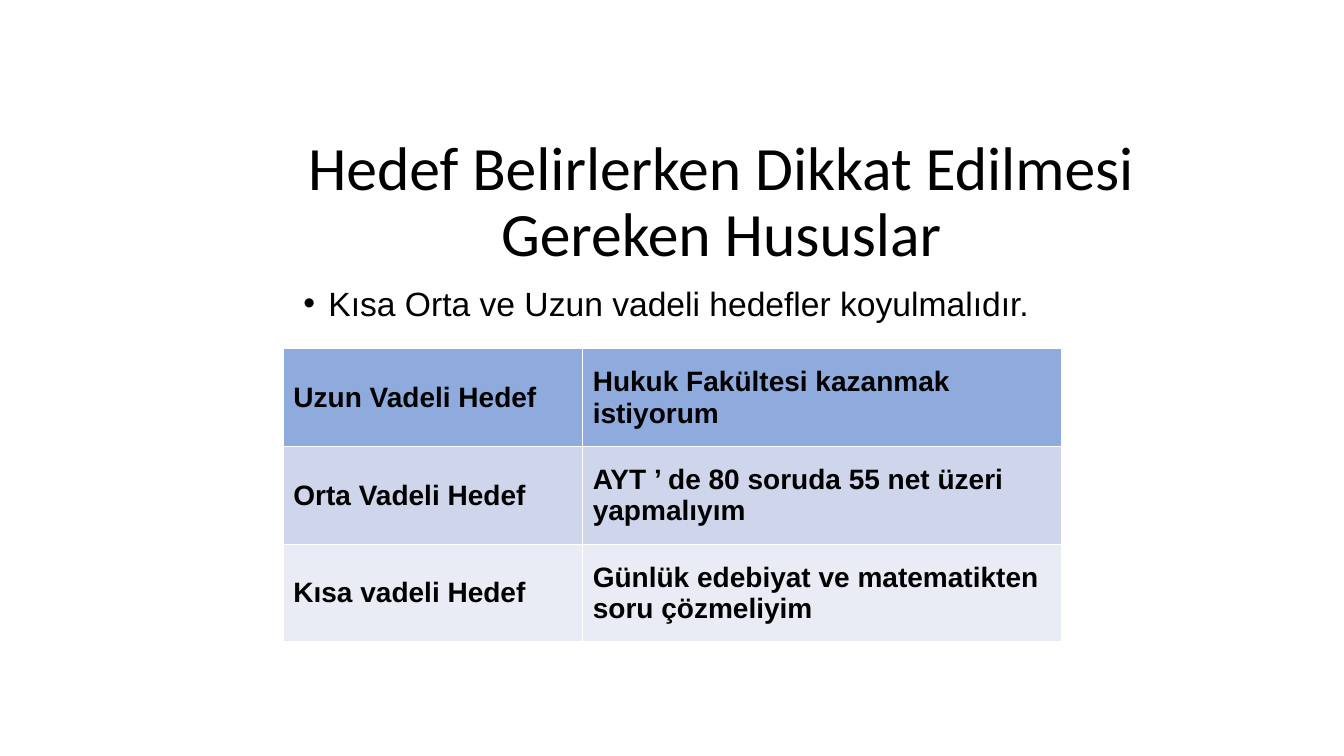
"""Build a slide on setting long, medium and short term goals."""
from lxml import etree
from pptx import Presentation
from pptx.dml.color import RGBColor
from pptx.enum.text import MSO_ANCHOR, PP_ALIGN
from pptx.oxml.ns import qn
from pptx.util import Inches, Pt

MIDDLE, TOP = MSO_ANCHOR.MIDDLE, MSO_ANCHOR.TOP
CENTER, LEFT = PP_ALIGN.CENTER, PP_ALIGN.LEFT

TITLE = "Hedef Belirlerken Dikkat Edilmesi Gereken Hususlar"
ADVICE = "Kısa Orta ve Uzun vadeli hedefler koyulmalıdır."
GOALS = [
    ("Uzun Vadeli Hedef", "Hukuk Fakültesi kazanmak istiyorum", "8FAADC"),
    ("Orta Vadeli Hedef", "AYT ’ de 80 soruda 55 net üzeri yapmalıyım", "CFD5EA"),
    ("Kısa vadeli Hedef", "Günlük edebiyat ve matematikten soru çözmeliyim", "E9EBF5"),
]
COL_WIDTHS = (2.97, 4.75)
ROW_HEIGHT = 0.97


def color(hex_value):
    return RGBColor.from_string(hex_value)


def add_run(p, text, size, font="Arial", bold=False):
    r = p.add_run()
    r.text = text
    r.font.name, r.font.size, r.font.bold = font, Pt(size), bold
    r.font.color.rgb = color("000000")


def add_text(s, box, anchor, align):
    tf = s.shapes.add_textbox(*map(Inches, box)).text_frame
    tf.word_wrap = True
    tf.vertical_anchor = anchor
    p = tf.paragraphs[0]
    p.alignment = align
    p.line_spacing = 0.9
    return p


def add_bullet(p, indent):
    pPr = p._p.get_or_add_pPr()
    pPr.set("marL", str(Inches(indent)))
    pPr.set("indent", str(-Inches(indent)))
    etree.SubElement(pPr, qn("a:buFont")).set("typeface", "Arial")
    etree.SubElement(pPr, qn("a:buChar")).set("char", "•")


def add_goals(s, left, top):
    size = (sum(COL_WIDTHS), ROW_HEIGHT * len(GOALS))
    table = s.shapes.add_table(len(GOALS), len(COL_WIDTHS),
                               *map(Inches, (left, top, *size))).table
    for column, width in zip(table.columns, COL_WIDTHS):
        column.width = Inches(width)
    for row, (*texts, fill) in zip(table.rows, GOALS):
        row.height = Inches(ROW_HEIGHT)
        for cell, text in zip(row.cells, texts):
            cell.fill.solid()
            cell.fill.fore_color.rgb = color(fill)
            cell.vertical_anchor = MIDDLE
            add_run(cell.text_frame.paragraphs[0], text, 20, bold=True)


def main():
    prs = Presentation()
    prs.slide_width, prs.slide_height = Inches(13.33), Inches(7.5)
    s = prs.slides.add_slide(prs.slide_layouts[6])
    p = add_text(s, (2.62, 1.24, 9.07, 1.56), MIDDLE, CENTER)
    add_run(p, TITLE, 44, "Calibri")
    p = add_text(s, (2.91, 2.8, 8.5, 0.6), TOP, LEFT)
    add_bullet(p, 0.25)
    add_run(p, ADVICE, 24)
    add_goals(s, 2.81, 3.46)
    prs.save("out.pptx")


if __name__ == "__main__":
    main()
